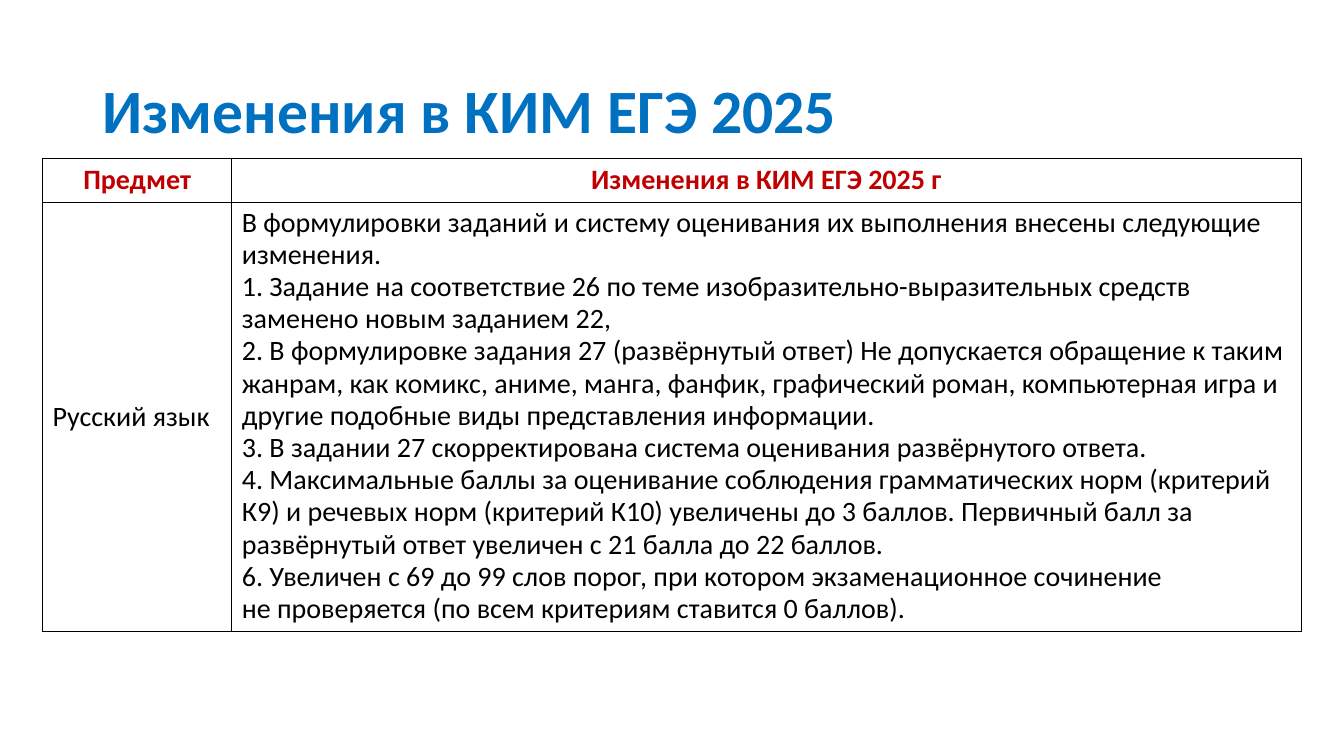
from lxml import etree
from pptx import Presentation
from pptx import util as u
from pptx.dml.color import RGBColor
from pptx.enum import text
from pptx.oxml import ns


def color(hex_string):
    return RGBColor.from_string(hex_string)


def write(paragraph, words, size=20, fill="000000", bold=False,
          align=text.PP_ALIGN.LEFT, spacing=None):
    paragraph.alignment = align
    paragraph.line_spacing = spacing
    run = paragraph.add_run()
    run.text = words
    run.font.name = "Calibri"
    run.font.size = u.Pt(size)
    run.font.bold = bold
    run.font.color.rgb = color(fill)


presentation = Presentation()
presentation.slide_width = u.Pt(960)
presentation.slide_height = u.Pt(540)
slide = presentation.slides.add_slide(presentation.slide_layouts[5])

# Title
title = slide.shapes.title
title.left, title.top = u.Pt(66), u.Pt(28.8)
title.width, title.height = u.Pt(828), u.Pt(104.4)
title.text_frame.vertical_anchor = text.MSO_ANCHOR.MIDDLE
title.text_frame.word_wrap = True
write(title.text_frame.paragraphs[0], "Изменения в КИМ ЕГЭ 2025",
      size=44, fill="0070C0", bold=True, spacing=0.9)

# Table frame
column_widths = [135.2, 763.8]
row_heights = [31.6, 306.2]
table = slide.shapes.add_table(2, 2, u.Pt(30.4), u.Pt(113), u.Pt(sum(column_widths)),
                               u.Pt(sum(row_heights))).table
for column, width in zip(table.columns, column_widths):
    column.width = u.Pt(width)
for row, height in zip(table.rows, row_heights):
    row.height = u.Pt(height)

# Cell borders and fills
for cell in table.iter_cells():
    properties = cell._tc.get_or_add_tcPr()
    for side in ("a:lnL", "a:lnR", "a:lnT", "a:lnB"):
        border = etree.SubElement(properties, ns.qn(side), w=str(u.Pt(0.96)))
        solid = etree.SubElement(border, ns.qn("a:solidFill"))
        etree.SubElement(solid, ns.qn("a:srgbClr"), val="000000")
    cell.fill.solid()
    cell.fill.fore_color.rgb = color("FFFFFF")

# Header row
for cell, heading in zip(table.rows[0].cells, ["Предмет", "Изменения в КИМ ЕГЭ 2025 г"]):
    write(cell.text_frame.paragraphs[0], heading, fill="C00000", bold=True,
          align=text.PP_ALIGN.CENTER)

# Subject
subject = table.cell(1, 0)
subject.vertical_anchor = text.MSO_ANCHOR.MIDDLE
write(subject.text_frame.paragraphs[0], "Русский язык")

# List of changes
changes = [
    "В формулировки заданий и систему оценивания их выполнения внесены следующие изменения.",
    "1. Задание на соответствие 26 по теме изобразительно-выразительных средств "
    "заменено новым заданием 22,",
    "2. В формулировке задания 27 (развёрнутый ответ) Не допускается обращение к таким "
    "жанрам, как комикс, аниме, манга, фанфик, графический роман, компьютерная игра и "
    "другие подобные виды представления информации.",
    "3. В задании 27 скорректирована система оценивания развёрнутого ответа.",
    "4. Максимальные баллы за оценивание соблюдения грамматических норм (критерий К9) "
    "и речевых норм (критерий К10) увеличены до 3 баллов. Первичный балл за "
    "развёрнутый ответ увеличен с 21 балла до 22 баллов.",
    "6. Увеличен с 69 до 99 слов порог, при котором экзаменационное сочинение",
    "не проверяется (по всем критериям ставится 0 баллов).",
]
frame = table.cell(1, 1).text_frame
for index, change in enumerate(changes):
    paragraph = frame.add_paragraph() if index else frame.paragraphs[0]
    write(paragraph, change, spacing=u.Pt(23))

presentation.save("out.pptx")
